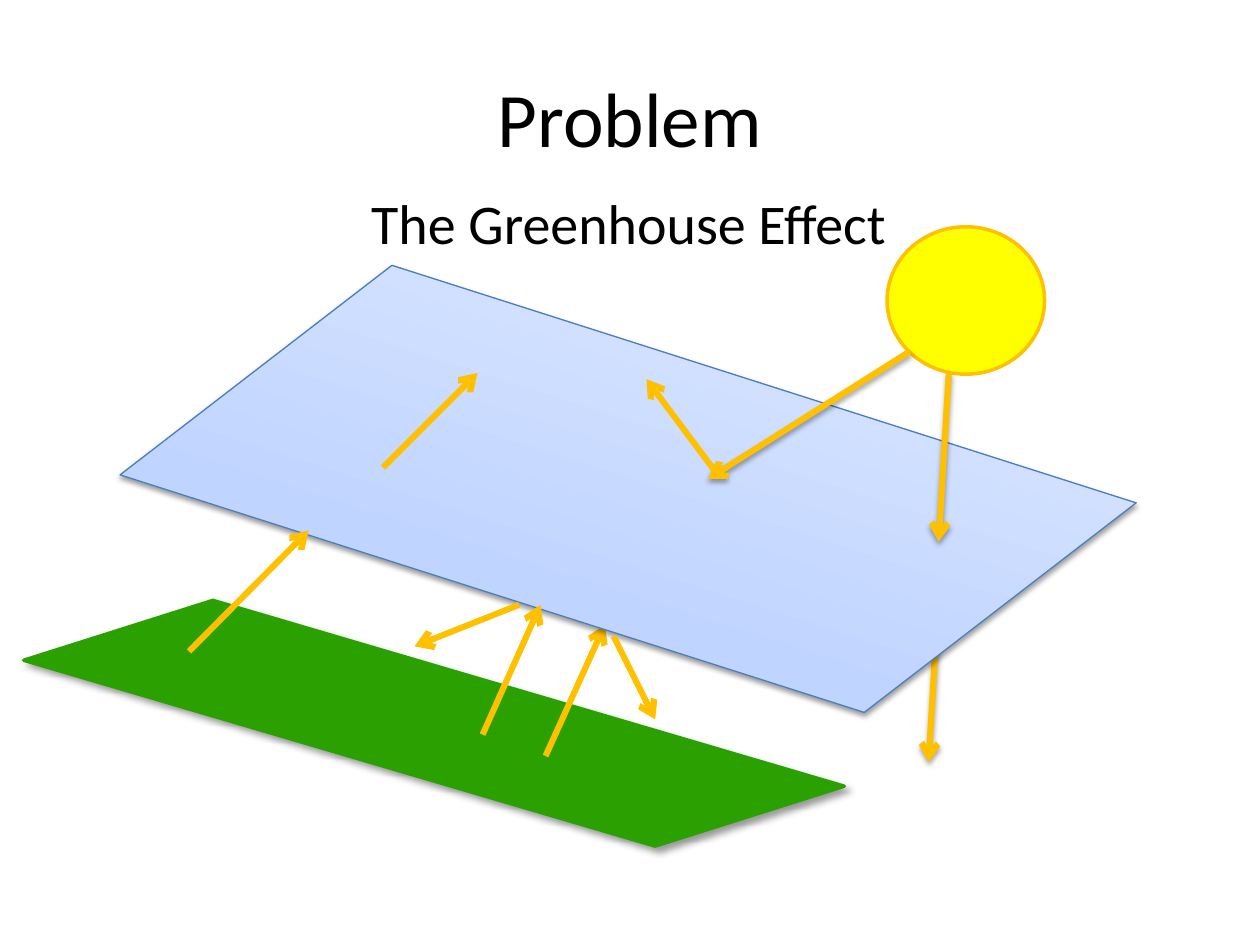
from typing import NamedTuple, Optional

from lxml.etree import SubElement
from pptx import Presentation
from pptx.dml.color import RGBColor
from pptx.enum.shapes import MSO_CONNECTOR as Connector
from pptx.enum.shapes import MSO_SHAPE as Preset
from pptx.enum.text import MSO_ANCHOR, MSO_AUTO_SIZE, PP_ALIGN
from pptx.oxml.ns import qn
from pptx.util import Inches, Pt

COLORS = {
    "text": "000000", "shadow": "000000", "ground": "2BA101", "ray": "FFC000",
    "sun": "FFFF00", "layer_edge": "4B7EBC",
    "layer_low": "A4C4FF", "layer_mid": "BFD4FF", "layer_high": "E6EEFF",
}
LAYER_STOPS = ((0, "layer_low"), (35, "layer_mid"), (100, "layer_high"))


class Shadow(NamedTuple):
    opacity: int
    blur: float
    distance: float
    angle: int


class Ray(NamedTuple):
    start: tuple[float, float]
    end: tuple[float, float]
    shadow: Optional[Shadow] = None


class Body(NamedTuple):
    preset: Preset
    box: tuple[float, float, float, float]
    fill: Optional[str]  # None means the layer gradient
    edge: str
    edge_width: float
    rotation: float = 0
    shadow: Optional[Shadow] = None


RAY_SHADOW = Shadow(35, 3.1, 1.8, 90)

# From back to front
SCENE = (
    Body(Preset.FLOWCHART_DATA, (0.18, 5.3, 6.53, 0.88), "ground", "ground", 2,
         16.4, Shadow(40, 4, 3, 45)),
    Ray((4.33, 6), (4.8, 4.96)),
    Ray((7.45, 4.71), (7.37, 6.05), RAY_SHADOW),
    Body(Preset.FLOWCHART_DATA, (1.11, 2.76, 7.75, 2.24), None, "layer_edge", 0.75,
         17.7, Shadow(38, 3.1, 1.6, 90)),
    Body(Preset.FLOWCHART_CONNECTOR, (7.04, 1.8, 1.25, 1.17), "sun", "ray", 2),
    Ray((7.22, 2.79), (5.62, 3.8), RAY_SHADOW),
    Ray((5.69, 3.76), (5.13, 3.01)),
    Ray((7.53, 2.96), (7.45, 4.3), RAY_SHADOW),
    Ray((3.83, 5.83), (4.29, 4.8)),
    Ray((4.12, 4.8), (3.29, 5.13)),
    Ray((4.87, 5.05), (5.2, 5.71)),
    Ray((1.5, 5.17), (2.45, 4.21)),
    Ray((3.04, 3.71), (3.79, 2.96)),
)


def rgb(name: str) -> RGBColor:
    return RGBColor.from_string(COLORS[name])


def set_line(line, color: str, width: float) -> None:
    line.color.rgb = rgb(color)
    line.width = Pt(width)


def set_shadow(shape, shadow: Optional[Shadow]) -> None:
    """Replace the theme shadow; call it after fill and line are set."""
    effects = SubElement(shape._element.spPr, qn("a:effectLst"))
    if shadow is None:
        return
    outer = SubElement(effects, qn("a:outerShdw"), {
        "blurRad": str(Pt(shadow.blur)), "dist": str(Pt(shadow.distance)),
        "dir": str(shadow.angle * 60000), "rotWithShape": "0"})
    color = SubElement(outer, qn("a:srgbClr"), val=COLORS["shadow"])
    SubElement(color, qn("a:alpha"), val=str(shadow.opacity * 1000))


def set_layer_gradient(fill, shape) -> None:
    fill.gradient()
    fill.gradient_angle = 90
    stops = shape._element.spPr.find(qn("a:gradFill")).find(qn("a:gsLst"))
    for stop in list(stops):
        stops.remove(stop)
    for position, name in LAYER_STOPS:
        stop = SubElement(stops, qn("a:gs"), pos=str(position * 1000))
        SubElement(stop, qn("a:srgbClr"), val=COLORS[name])


def draw_body(shapes, body: Body) -> None:
    shape = shapes.add_shape(body.preset, *map(Inches, body.box))
    shape.rotation = body.rotation
    if body.fill is None:
        set_layer_gradient(shape.fill, shape)
    else:
        shape.fill.solid()
        shape.fill.fore_color.rgb = rgb(body.fill)
    set_line(shape.line, body.edge, body.edge_width)
    set_shadow(shape, body.shadow)


def draw_ray(shapes, ray: Ray) -> None:
    connector = shapes.add_connector(Connector.STRAIGHT, *map(Inches, ray.start + ray.end))
    set_line(connector.line, "ray", 3.5)
    SubElement(connector.line._ln, qn("a:tailEnd"), type="arrow")
    set_shadow(connector, ray.shadow)


def write_text(shape, text: str, size: float, frame_format: dict) -> None:
    frame = shape.text_frame
    frame.text = text
    for name, value in frame_format.items():
        setattr(frame, name, value)
    paragraph = frame.paragraphs[0]
    paragraph.alignment = PP_ALIGN.CENTER
    for name, value in {"name": "Calibri", "size": Pt(size)}.items():
        setattr(paragraph.runs[0].font, name, value)
    paragraph.runs[0].font.color.rgb = rgb("text")


def main() -> None:
    presentation = Presentation()
    presentation.slide_width, presentation.slide_height = Inches(10), Inches(7.5)
    slide = presentation.slides.add_slide(presentation.slide_layouts[5])
    shapes = slide.shapes

    title = shapes.title
    title.left, title.top, title.width, title.height = map(Inches, (0.5, 0.3, 9, 1.25))
    write_text(title, "Problem", 44, {"vertical_anchor": MSO_ANCHOR.MIDDLE})

    for item in SCENE:
        if isinstance(item, Body):
            draw_body(shapes, item)
        else:
            draw_ray(shapes, item)

    subtitle = shapes.add_textbox(*map(Inches, (2.78, 1.45, 4.42, 0.64)))
    write_text(subtitle, "The Greenhouse Effect", 32,
               {"word_wrap": True, "auto_size": MSO_AUTO_SIZE.SHAPE_TO_FIT_TEXT})
    presentation.save("out.pptx")


if __name__ == "__main__":
    main()
